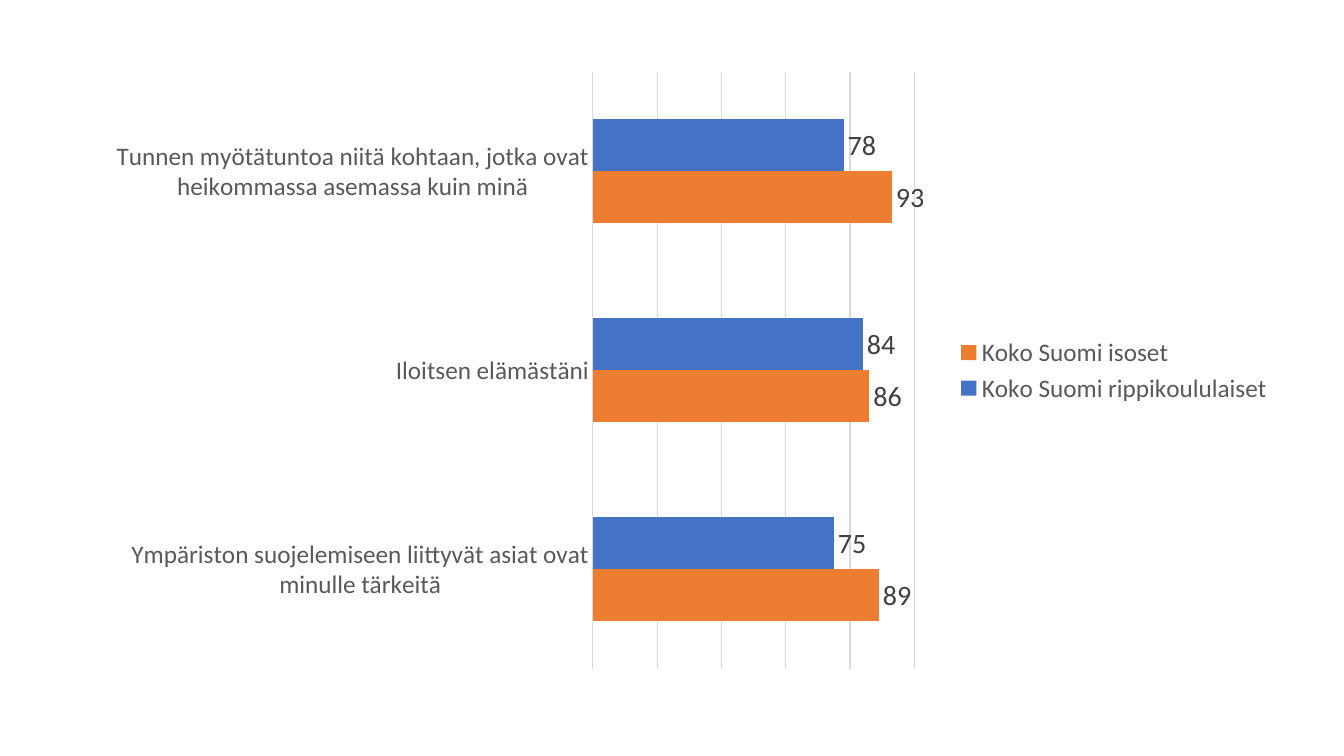
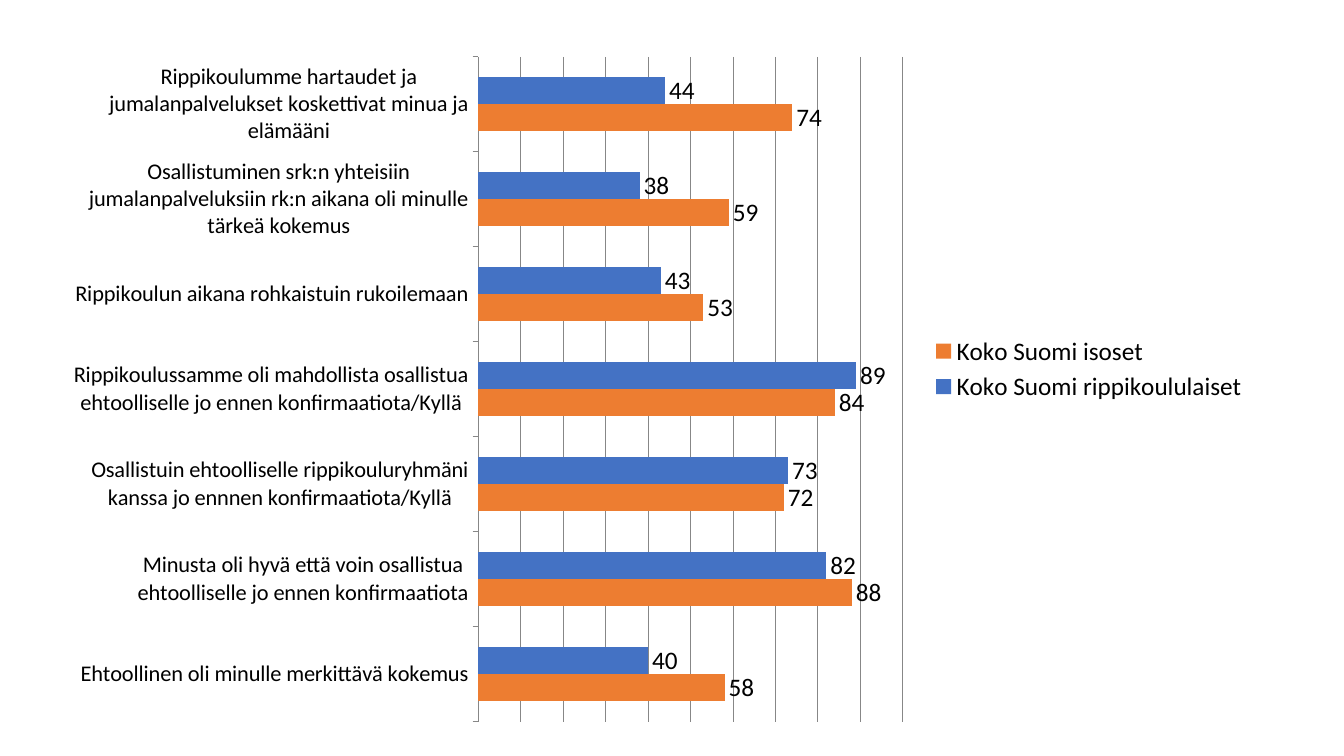
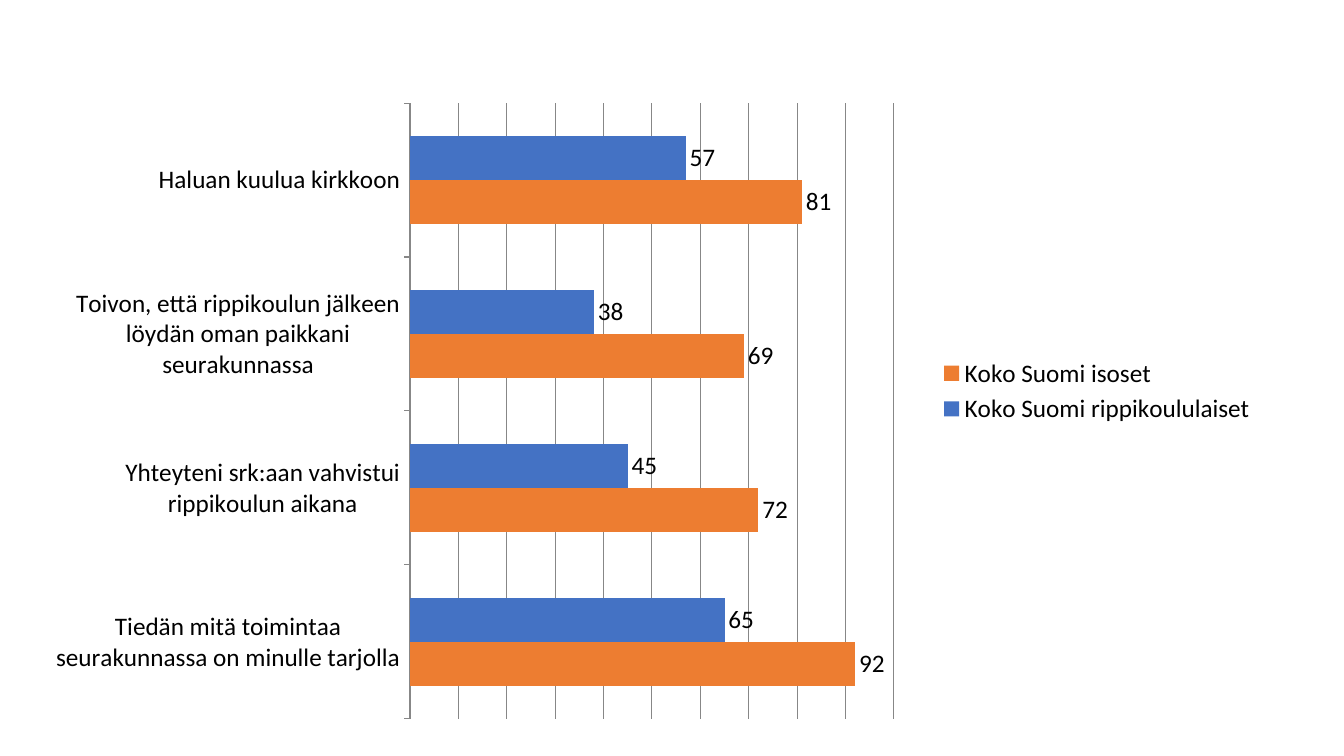
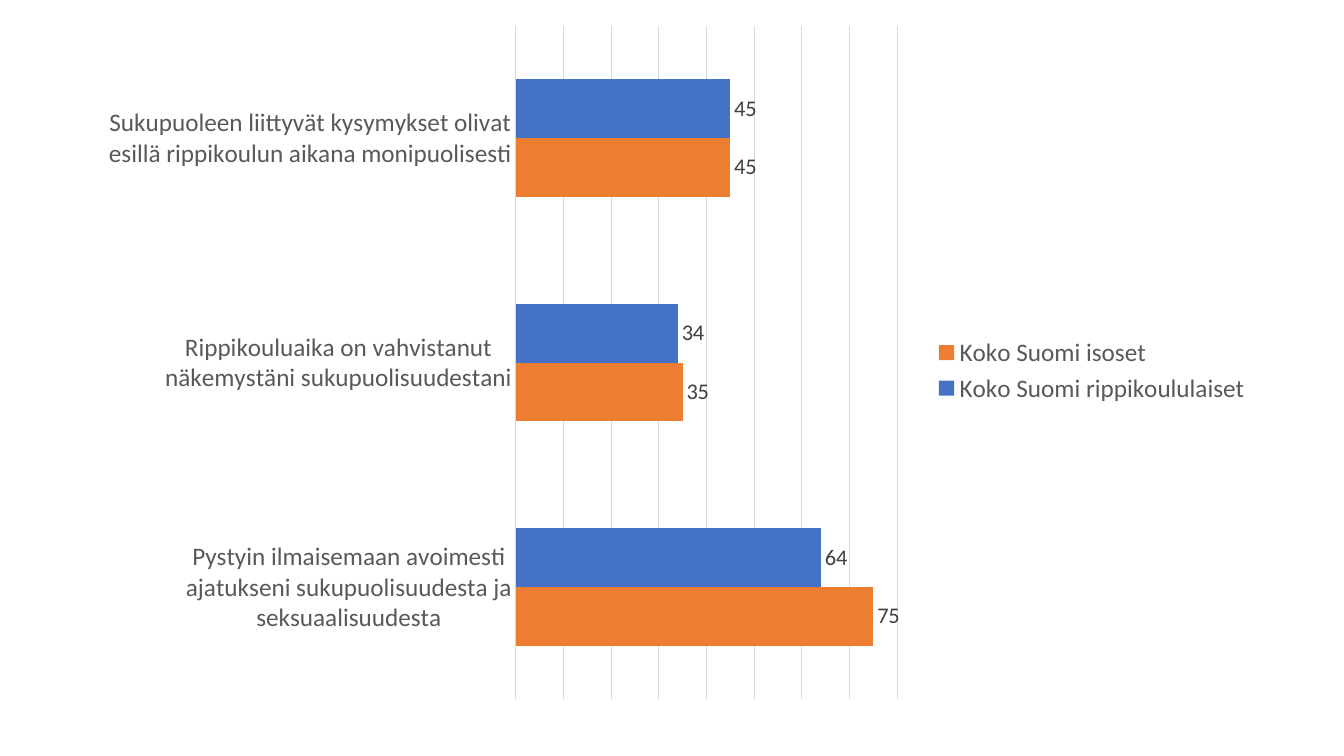
from lxml.etree import SubElement
from pptx import Presentation
from pptx.chart.data import CategoryChartData
from pptx.dml.color import RGBColor
from pptx.enum.chart import XL_CHART_TYPE, XL_LABEL_POSITION, XL_LEGEND_POSITION, XL_TICK_MARK
from pptx.oxml.ns import qn
from pptx.util import Inches, Pt

COLORS = {
    "pupil": "4472C4",
    "leader": "ED7D31",
    "black": "000000",
    "dark": "404040",
    "text": "595959",
    "pale": "D9D9D9",
    "gray": "878787",
}
FONT = "Calibri"
GROUPS = {"pupil": "Koko Suomi rippikoululaiset", "leader": "Koko Suomi isoset"}

SOFT = {"text": "text", "label": "dark", "line": "pale", "gap": 182, "tick": XL_TICK_MARK.NONE}
PLAIN = {"text": "black", "label": "black", "line": "gray", "gap": 150, "tick": XL_TICK_MARK.OUTSIDE}

SLIDES = [
    {
        "box": (0.92, 0.59, 11.81, 6.17),
        "plot": (0.42, 0.02, 0.27, 0.96),
        "style": SOFT,
        "sizes": (18, 20),
        "scale": (100, 20),
        "rows": [
            ("Tunnen myötätuntoa niitä kohtaan, jotka ovat heikommassa asemassa kuin minä", 78, 93),
            ("Iloitsen elämästäni", 84, 86),
            ("Ympäriston suojelemiseen liittyvät asiat ovat minulle tärkeitä", 75, 89),
        ],
    },
    {
        "box": (0.69, 0, 11.79, 7.32),
        "plot": (0.344, 0.077, 0.357, 0.901),
        "style": PLAIN,
        "sizes": (16, 18),
        "scale": (100, 10),
        "rows": [
            ("Rippikoulumme hartaudet ja jumalanpalvelukset koskettivat minua ja elämääni", 44, 74),
            ("Osallistuminen srk:n yhteisiin jumalanpalveluksiin rk:n aikana oli minulle tärkeä kokemus", 38, 59),
            ("Rippikoulun aikana rohkaistuin rukoilemaan", 43, 53),
            ("Rippikoulussamme oli mahdollista osallistua ehtoolliselle jo ennen konfirmaatiota/Kyllä", 89, 84),
            ("Osallistuin ehtoolliselle rippikouluryhmäni kanssa jo ennnen konfirmaatiota/Kyllä", 73, 72),
            ("Minusta oli hyvä että voin osallistua ehtoolliselle jo ennen konfirmaatiota", 82, 88),
            ("Ehtoollinen oli minulle merkittävä kokemus", 40, 58),
        ],
    },
    {
        "box": (0.53, 0.47, 12.03, 6.82),
        "plot": (0.294, 0.081, 0.399, 0.896),
        "style": PLAIN,
        "sizes": (18, 18),
        "scale": (100, 10),
        "rows": [
            ("Haluan kuulua kirkkoon", 57, 81),
            ("Toivon, että rippikoulun jälkeen löydän oman paikkani seurakunnassa", 38, 69),
            ("Yhteyteni srk:aan vahvistui rippikoulun aikana", 45, 72),
            ("Tiedän mitä toimintaa seurakunnassa on minulle tarjolla", 65, 92),
        ],
    },
    {
        "box": (1.01, 0.18, 11.5, 6.99),
        "plot": (0.357, 0.011, 0.329, 0.956),
        "style": SOFT,
        "sizes": (18, 16),
        "scale": (80, 10),
        "rows": [
            ("Sukupuoleen liittyvät kysymykset olivat esillä rippikoulun aikana monipuolisesti", 45, 45),
            ("Rippikouluaika on vahvistanut näkemystäni sukupuolisuudestani", 34, 35),
            ("Pystyin ilmaisemaan avoimesti ajatukseni sukupuolisuudesta ja seksuaalisuudesta", 64, 75),
        ],
    },
]


def tint(color, name):
    color.rgb = RGBColor.from_string(COLORS[name])


def put(item, values):
    for key, value in values.items():
        setattr(item, key, value)


def set_font(font, size, color):
    put(font, {"name": FONT, "size": Pt(size), "bold": False})
    tint(font.color, color)


def set_line(line, color):
    line.width = Pt(0.75)
    tint(line.color, color)


def set_plot(chart, plot):
    area = chart.element.find(".//" + qn("c:plotArea"))
    for old in area.findall(qn("c:layout")):
        area.remove(old)
    layout = SubElement(area, qn("c:layout"))
    area.insert(0, layout)
    inner = SubElement(layout, qn("c:manualLayout"))
    modes = {"layoutTarget": "inner", "xMode": "edge", "yMode": "edge"}
    for tag, value in {**modes, **dict(zip("xywh", plot))}.items():
        SubElement(inner, qn("c:" + tag)).set("val", str(value))


def set_axes(chart, style, size, scale):
    cat, val = chart.category_axis, chart.value_axis
    put(cat, {"reverse_order": True, "major_tick_mark": style["tick"], "has_major_gridlines": False})
    set_font(cat.tick_labels.font, size, style["text"])
    set_line(cat.format.line, style["line"])
    top, step = scale
    put(val, {"minimum_scale": 0, "maximum_scale": top, "major_unit": step,
              "has_major_gridlines": True, "visible": False})
    set_line(val.major_gridlines.format.line, style["line"])


def set_bars(chart, style, size):
    bars = chart.plots[0]
    put(bars, {"gap_width": style["gap"], "overlap": 0, "vary_by_categories": False})
    for group, color in zip(bars.series, GROUPS):
        group.format.fill.solid()
        tint(group.format.fill.fore_color, color)
        labels = group.data_labels
        put(labels, {"show_value": True, "position": XL_LABEL_POSITION.OUTSIDE_END})
        set_font(labels.font, size, style["label"])


def set_legend(chart, style):
    chart.has_legend = True
    put(chart.legend, {"position": XL_LEGEND_POSITION.RIGHT, "include_in_layout": False})
    set_font(chart.legend.font, 18, style["text"])


def add_bars(slide, box, plot, style, sizes, scale, rows):
    names, *values = zip(*rows)
    data = CategoryChartData()
    data.categories = names
    for name, nums in zip(GROUPS.values(), values):
        data.add_series(name, nums)
    frame = slide.shapes.add_chart(XL_CHART_TYPE.BAR_CLUSTERED, *map(Inches, box), data)
    chart = frame.chart
    chart.has_title = False
    set_font(chart.font, 18, "black")
    set_axes(chart, style, sizes[0], scale)
    set_bars(chart, style, sizes[1])
    set_legend(chart, style)
    set_plot(chart, plot)


def main():
    deck = Presentation()
    put(deck, {"slide_width": Inches(13.33), "slide_height": Inches(7.5)})
    for parts in SLIDES:
        add_bars(deck.slides.add_slide(deck.slide_layouts[6]), **parts)
    deck.save("out.pptx")


if __name__ == "__main__":
    main()
